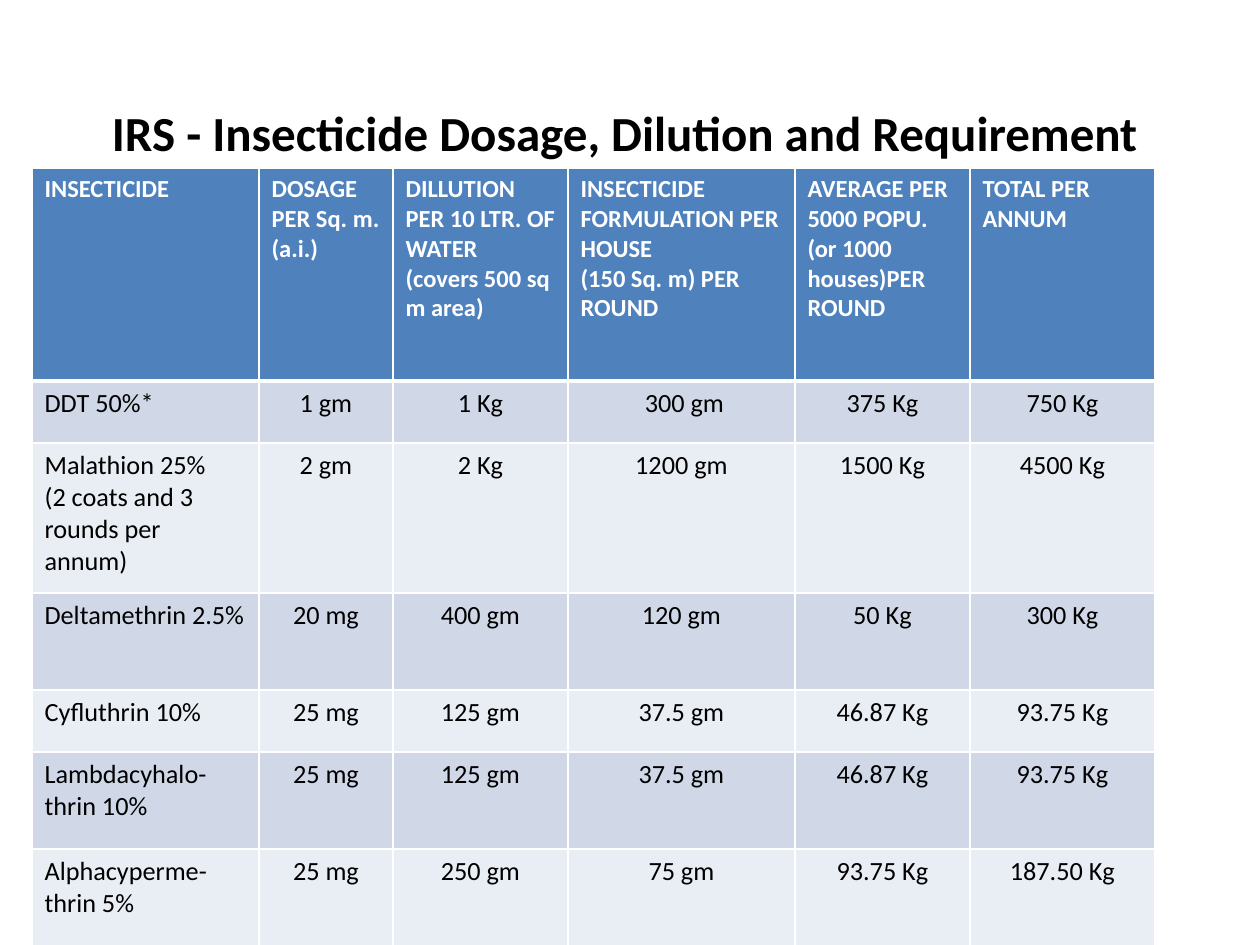
from lxml import etree
from pptx import Presentation
from pptx import util as u
from pptx.dml.color import RGBColor
from pptx.enum import text
from pptx.oxml.ns import qn

BLACK = RGBColor(0x00, 0x00, 0x00)
WHITE = RGBColor(0xFF, 0xFF, 0xFF)
BLUE = RGBColor(0x4F, 0x81, 0xBD)
DARK = RGBColor(0xD0, 0xD8, 0xE8)
LIGHT = RGBColor(0xE9, 0xED, 0xF4)

LEFT, MID = text.PP_ALIGN.LEFT, text.PP_ALIGN.CENTER
COLS = [227, 134, 175, 227, 175, 185]
ROWS = [213, 62, 150, 97, 62, 97, 97]
HEADS = [
    "INSECTICIDE",
    "DOSAGE PER Sq. m. (a.i.)",
    "DILLUTION PER 10 LTR. OF WATER (covers 500 sq m area)",
    "INSECTICIDE FORMULATION PER HOUSE\n(150 Sq. m) PER ROUND",
    "AVERAGE PER 5000 POPU. (or 1000 houses)PER ROUND",
    "TOTAL PER ANNUM",
]
DOSES = [
    ["DDT 50%*", "1 gm", "1 Kg", " 300 gm", "375 Kg", "750 Kg"],
    ["Malathion 25%\n(2 coats and 3 rounds per annum)",
     "2 gm", "2 Kg", "1200 gm", "1500 Kg", "4500 Kg"],
    ["Deltamethrin 2.5%", "20 mg", "400 gm", "120 gm", "50 Kg", "300 Kg"],
    ["Cyfluthrin 10%", "25 mg", "125 gm", "37.5 gm", "46.87 Kg", "93.75 Kg"],
    ["Lambdacyhalo-thrin 10%",
     "25 mg", "125 gm", "37.5 gm", "46.87 Kg", "93.75 Kg"],
    ["Alphacyperme-thrin 5%",
     "25 mg", "250 gm", "75 gm", "93.75 Kg", "187.50 Kg"],
]


def px(num):
    return u.Emu(round(num * 914400 / 126))


class Deck:
    """Holds the style and the current slide."""

    face = "Calibri"

    def __init__(self, wide, high):
        self.prs = Presentation()
        self.prs.slide_width, self.prs.slide_height = px(wide), px(high)
        self.slide = self.prs.slides.add_slide(self.prs.slide_layouts[6])

    def label(self, frame, words, size, color, bold, align):
        frame.text = words
        style = {"name": self.face, "size": u.Pt(size), "bold": bold}
        for para in frame.paragraphs:
            para.alignment = align
            for run in para.runs:
                for key, val in style.items():
                    setattr(run.font, key, val)
                run.font.color.rgb = color

    def title(self, words, *box):
        frame = self.slide.shapes.add_textbox(*map(px, box)).text_frame
        frame.word_wrap = True
        frame.vertical_anchor = text.MSO_ANCHOR.MIDDLE
        self.label(frame, words, 28, BLACK, True, MID)

    def edge(self, cell, head):
        """Draw white borders, thicker between the header and the body."""
        props = cell._tc.get_or_add_tcPr()
        for side in "LRTB":
            wide = 3 if head and side == "B" else 1
            line = etree.SubElement(props, qn(f"a:ln{side}"), w=str(u.Pt(wide)))
            fill = etree.SubElement(line, qn("a:solidFill"))
            etree.SubElement(fill, qn("a:srgbClr"), val=str(WHITE))

    def table(self, left, top, cols, rows, data):
        box = map(px, (left, top, sum(cols), sum(rows)))
        grid = self.slide.shapes.add_table(len(rows), len(cols), *box).table
        for col, wide in zip(grid.columns, cols):
            col.width = px(wide)
        for r, (row, high) in enumerate(zip(grid.rows, rows)):
            row.height = px(high)
            head = r == 0
            for c, cell in enumerate(row.cells):
                self.edge(cell, head)
                cell.fill.solid()
                cell.fill.fore_color.rgb = (
                    BLUE if head else DARK if r % 2 else LIGHT)
                self.label(cell.text_frame, data[r][c], 14 if head else 15,
                           WHITE if head else BLACK, head,
                           LEFT if head or c == 0 else MID)


def main():
    deck = Deck(1260, 945)
    deck.title("IRS - Insecticide Dosage, Dilution and Requirement ",
               63, 105, 1134, 53)
    deck.table(32, 168, COLS, ROWS, [HEADS] + DOSES)
    deck.prs.save("out.pptx")


if __name__ == "__main__":
    main()
